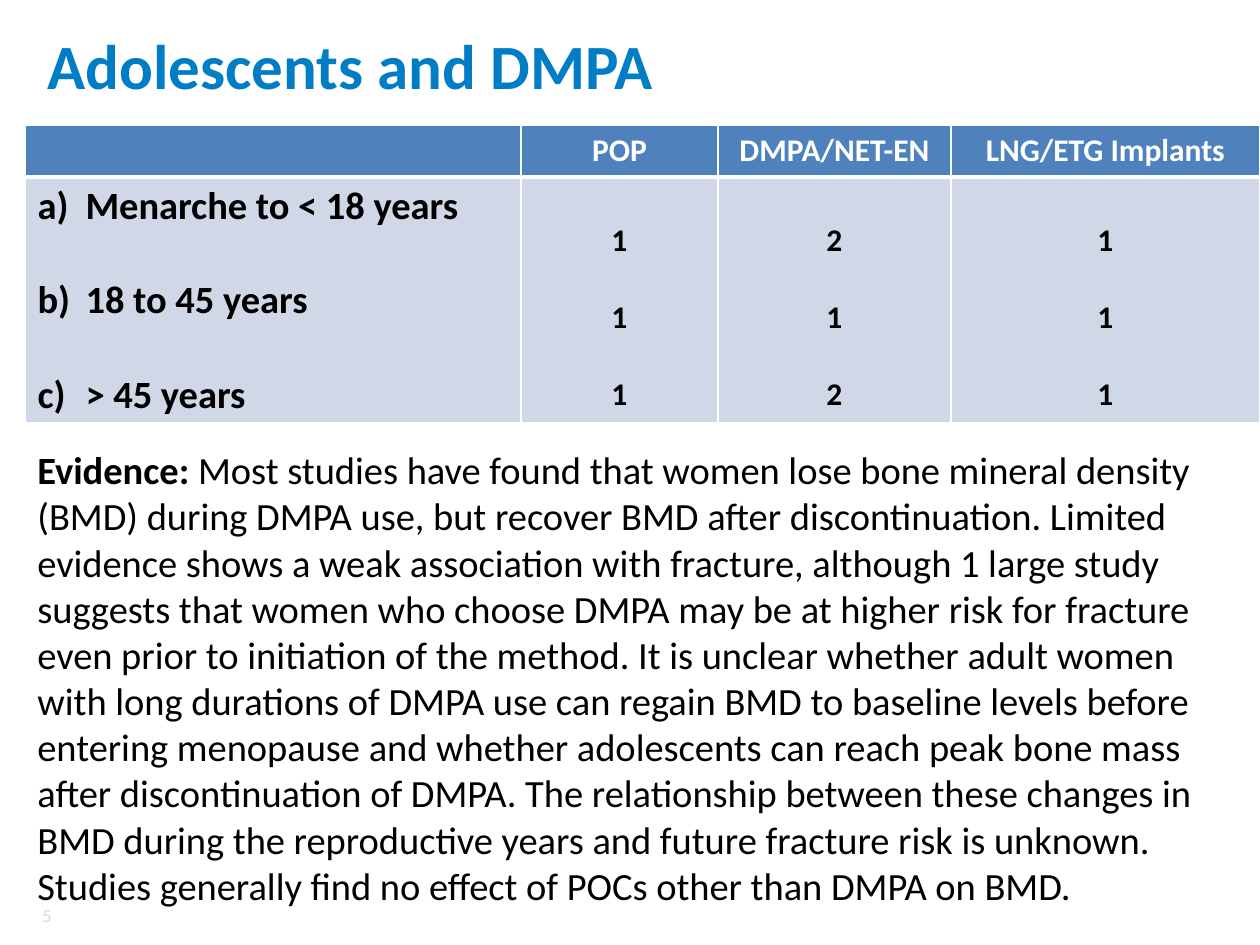
from dataclasses import dataclass

from lxml import etree
from pptx import Presentation
from pptx.dml.color import RGBColor
from pptx.enum.text import MSO_ANCHOR, MSO_AUTO_SIZE, PP_ALIGN
from pptx.oxml.ns import qn
from pptx.util import Emu, Pt

LEFT, CENTER, RIGHT = PP_ALIGN.LEFT, PP_ALIGN.CENTER, PP_ALIGN.RIGHT
TOP, MIDDLE = MSO_ANCHOR.TOP, MSO_ANCHOR.MIDDLE
GROW = MSO_AUTO_SIZE.SHAPE_TO_FIT_TEXT
BLANK_LAYOUT = 6
PX_PER_INCH = 126
EMU_PER_INCH = 914400


@dataclass(frozen=True)
class Theme:
    font: str = "Calibri"
    title: str = "007DC5"
    text: str = "000000"
    number: str = "D9D9D9"
    header_text: str = "FFFFFF"
    header_fill: str = "4F81BD"
    body_fill: str = "D0D8E8"
    border: str = "FFFFFF"
    title_size: float = 36
    reading_size: float = 22
    table_size: float = 18
    number_size: float = 10.5
    thin: float = 1
    thick: float = 3
    age_gap: float = 27
    list_indent: int = 48


def px(length):
    return Emu(round(length * EMU_PER_INCH / PX_PER_INCH))


class SlideBuilder:
    def __init__(self, slide, theme):
        self.slide = slide
        self.theme = theme

    def format_run(self, run, size, color, bold=False):
        run.font.name = self.theme.font
        run.font.size = Pt(size)
        run.font.bold = bold
        run.font.color.rgb = RGBColor.from_string(color)

    def text_box(self, box, runs, size, color, align=LEFT, anchor=MIDDLE, grow=False):
        """Add one paragraph made of (text, bold) runs."""
        frame = self.slide.shapes.add_textbox(*map(px, box)).text_frame
        frame.word_wrap = True
        frame.vertical_anchor = anchor
        if grow:
            frame.auto_size = GROW
        paragraph = frame.paragraphs[0]
        paragraph.alignment = align
        for text, bold in runs:
            run = paragraph.add_run()
            run.text = text
            self.format_run(run, size, color, bold)

    def border(self, cell, top, bottom):
        properties = cell._tc.get_or_add_tcPr()
        widths = {"L": self.theme.thin, "R": self.theme.thin, "T": top, "B": bottom}
        for side, width in widths.items():
            line = etree.SubElement(properties, qn(f"a:ln{side}"), w=str(Pt(width)))
            fill = etree.SubElement(line, qn("a:solidFill"))
            etree.SubElement(fill, qn("a:srgbClr"), val=self.theme.border)

    def letter_list(self, paragraph):
        """Number a paragraph a), b), c) with a hanging indent."""
        indent = px(self.theme.list_indent)
        properties = paragraph._p.get_or_add_pPr()
        properties.set("marL", str(indent))
        properties.set("indent", str(-indent))
        etree.SubElement(properties, qn("a:buFont"), typeface="+mj-lt")
        etree.SubElement(properties, qn("a:buAutoNum"), type="alphaLcParenR")

    def cell(self, cell, lines, header, ages):
        theme = self.theme
        self.border(
            cell,
            top=theme.thin if header else theme.thick,
            bottom=theme.thick if header else theme.thin,
        )
        cell.fill.solid()
        cell.fill.fore_color.rgb = RGBColor.from_string(
            theme.header_fill if header else theme.body_fill
        )
        cell.text_frame.text = "\n".join(lines)
        color = theme.header_text if header else theme.text
        size = theme.reading_size if ages else theme.table_size
        for index, paragraph in enumerate(cell.text_frame.paragraphs):
            if ages:
                if index:
                    paragraph.space_before = Pt(theme.age_gap)
                self.letter_list(paragraph)
            else:
                paragraph.alignment = CENTER
                if not header:
                    paragraph.line_spacing = 2.0
            paragraph.font.size = Pt(size)
            for run in paragraph.runs:
                self.format_run(run, size, color, bold=True)

    def table(self, left, top, widths, heights, columns):
        """Fill a table from (heading, body lines) columns; the first lists ages."""
        table = self.slide.shapes.add_table(
            len(heights), len(widths),
            px(left), px(top), px(sum(widths)), px(sum(heights)),
        ).table
        for row, height in zip(table.rows, heights):
            row.height = px(height)
        for index, (width, (heading, body)) in enumerate(zip(widths, columns)):
            table.columns[index].width = px(width)
            self.cell(table.cell(0, index), [heading], header=True, ages=False)
            self.cell(table.cell(1, index), body, header=False, ages=index == 0)


AGE_RATINGS = [
    ("", ["Menarche to < 18 years", "18 to 45 years", "> 45 years"]),
    ("POP", ["1", "1", "1"]),
    ("DMPA/NET-EN", ["2", "1", "2"]),
    ("LNG/ETG Implants", ["1", "1", "1"]),
]

EVIDENCE = (
    "Most studies have found that women lose bone mineral density (BMD) during "
    "DMPA use, but recover BMD after discontinuation. Limited evidence shows a "
    "weak association with fracture, although 1 large study suggests that women "
    "who choose DMPA may be at higher risk for fracture even prior to initiation "
    "of the method. It is unclear whether adult women with long durations of DMPA "
    "use can regain BMD to baseline levels before entering menopause and whether "
    "adolescents can reach peak bone mass after discontinuation of DMPA. The "
    "relationship between these changes in BMD during the reproductive years and "
    "future fracture risk is unknown. Studies generally find no effect of POCs "
    "other than DMPA on BMD."
)


def main():
    presentation = Presentation()
    presentation.slide_width, presentation.slide_height = px(1260), px(945)
    slide = presentation.slides.add_slide(presentation.slide_layouts[BLANK_LAYOUT])
    theme = Theme()
    builder = SlideBuilder(slide, theme)

    builder.text_box((15, 900, 49, 30), [("5", False)],
                     theme.number_size, theme.number, align=RIGHT)
    builder.text_box((35, 6, 1134, 117), [("Adolescents and DMPA", True)],
                     theme.title_size, theme.title)
    builder.table(25, 125, widths=[496, 197, 233, 309], heights=[52, 245],
                  columns=AGE_RATINGS)
    builder.text_box((25, 440, 1181, 479), [("Evidence: ", True), (EVIDENCE, False)],
                     theme.reading_size, theme.text, anchor=TOP, grow=True)

    presentation.save("out.pptx")


if __name__ == "__main__":
    main()
